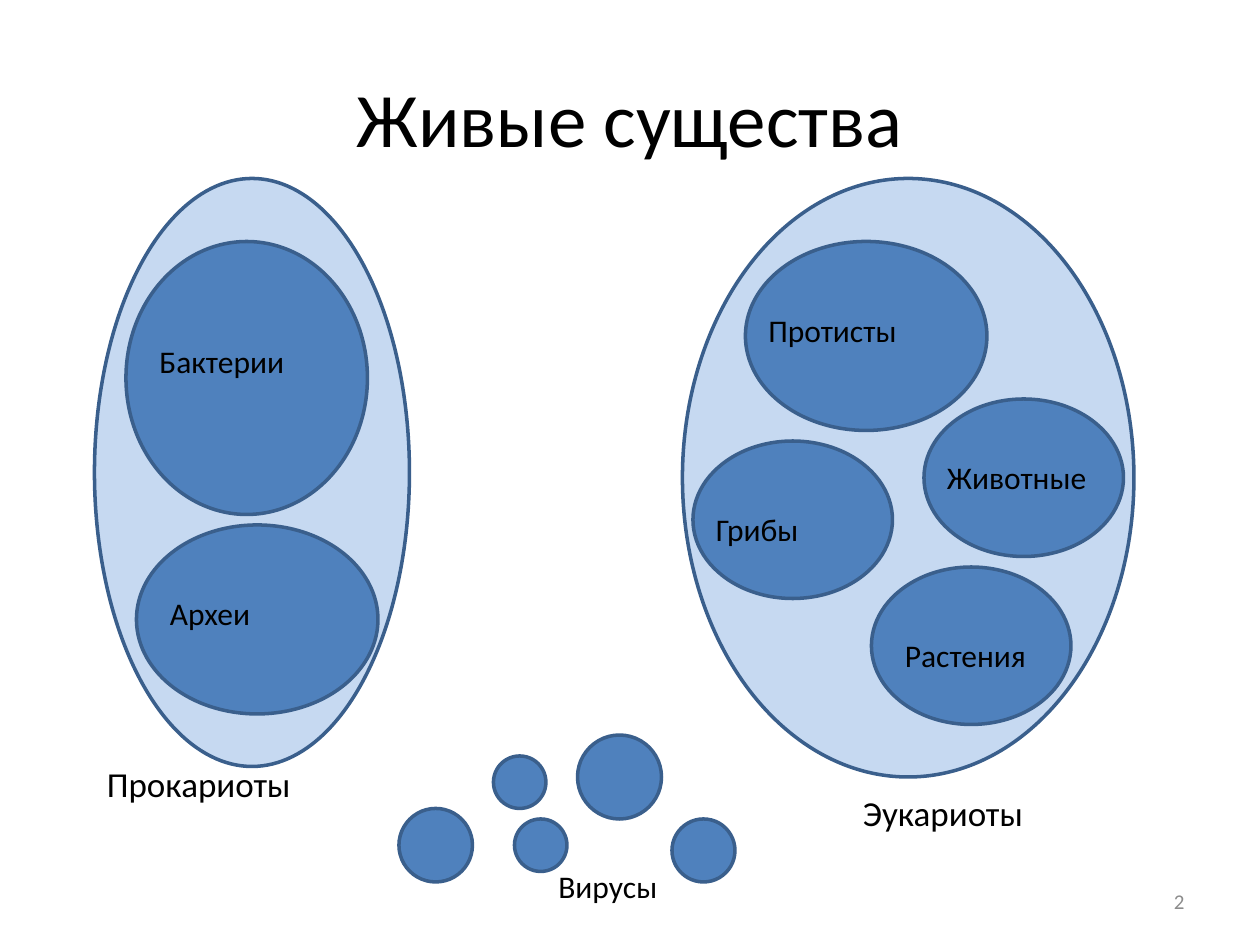
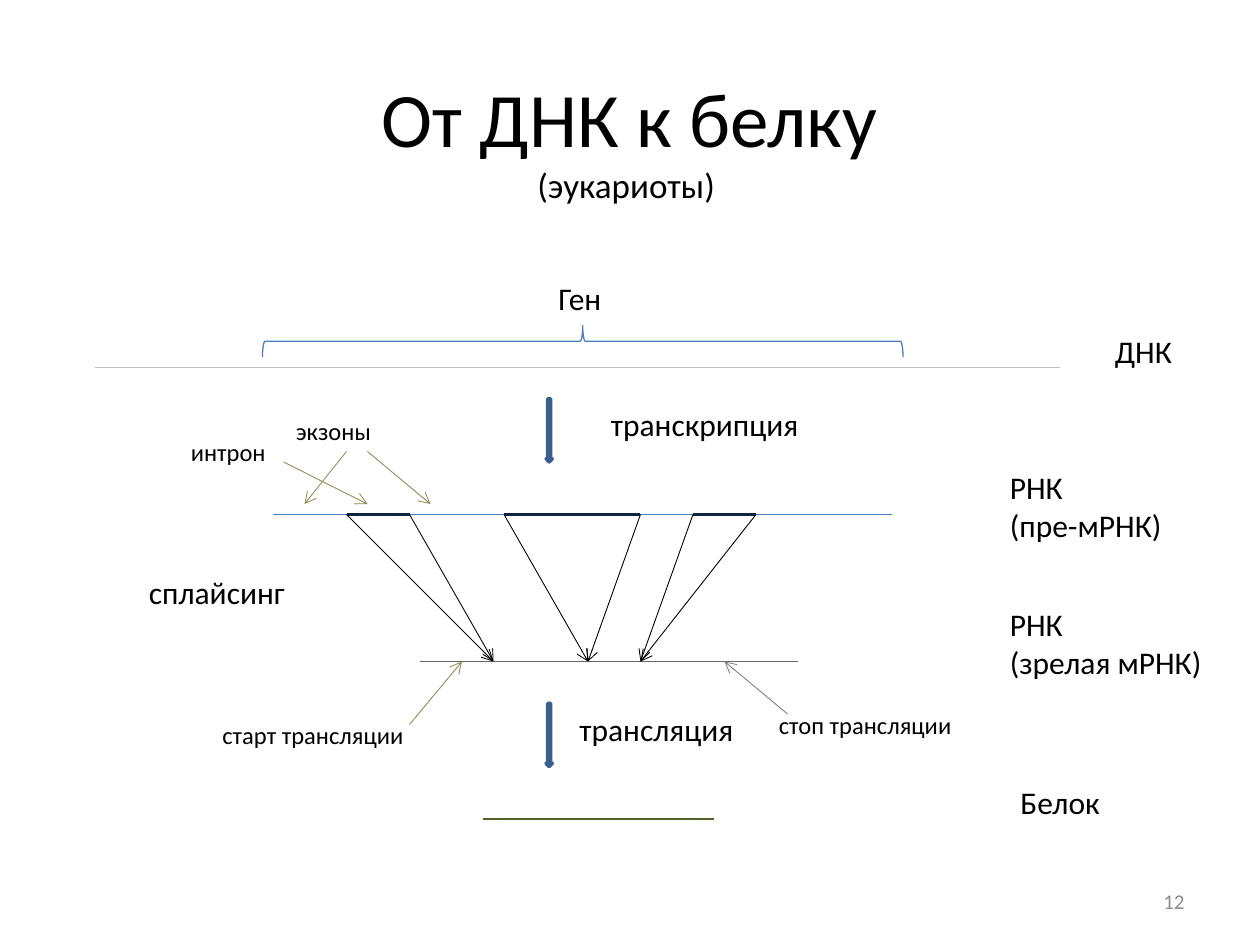
import dataclasses

import lxml.etree
import pptx
import pptx.dml.color
import pptx.enum.shapes
import pptx.enum.text
import pptx.oxml.ns
import pptx.util

SHAPE = pptx.enum.shapes.MSO_SHAPE
ALIGN = pptx.enum.text.PP_ALIGN
ANCHOR = pptx.enum.text.MSO_ANCHOR
COLUMNS, ROWS = 120, 90
CELL = pptx.util.Inches(10) // COLUMNS


@dataclasses.dataclass(frozen=True)
class Theme:
    font: str = "Calibri"
    title_size: int = 44
    caption_size: int = 20
    label_size: int = 18
    note_size: int = 14
    number_size: int = 12
    text: str = "000000"
    number: str = "8C8C8C"
    group_fill: str = "C6D9F1"
    member_fill: str = "4F81BD"
    outline: str = "3A5F8C"
    dna: str = "BFBFBF"
    rna: str = "4B7EBC"
    mature_rna: str = "666666"
    exon: str = "0F243E"
    protein: str = "4F6228"
    pointer: str = "948A54"
    stop_pointer: str = "808080"


THEME = Theme()


@dataclasses.dataclass(frozen=True)
class Region:
    slide: object
    left: float
    top: float

    def point(self, column, row):
        return round((self.left + column) * CELL), round((self.top + row) * CELL)

    def box(self, column, row, width, height):
        return *self.point(column, row), round(width * CELL), round(height * CELL)


def rgb(value):
    return pptx.dml.color.RGBColor.from_string(value)


def add_text(region, text, box, size=THEME.label_size, color=THEME.text,
             align=ALIGN.LEFT, anchor=ANCHOR.TOP):
    shape = region.slide.shapes.add_textbox(*region.box(*box))
    frame = shape.text_frame
    frame.word_wrap = True
    frame.vertical_anchor = anchor
    frame.text = text
    for paragraph in frame.paragraphs:
        paragraph.alignment = align
        for run in paragraph.runs:
            run.font.name = THEME.font
            run.font.size = pptx.util.Pt(size)
            run.font.color.rgb = rgb(color)


def add_filled(region, kind, box, fill=THEME.member_fill):
    shape = region.slide.shapes.add_shape(kind, *region.box(*box))
    shape.shadow.inherit = False
    shape.fill.solid()
    shape.fill.fore_color.rgb = rgb(fill)
    shape.line.color.rgb = rgb(THEME.outline)
    shape.line.width = pptx.util.Pt(2)


def add_line(region, start, end, color, width, arrow=False):
    connector = region.slide.shapes.add_connector(
        pptx.enum.shapes.MSO_CONNECTOR.STRAIGHT,
        *region.point(*start), *region.point(*end))
    connector.line.color.rgb = rgb(color)
    connector.line.width = pptx.util.Pt(width)
    if arrow:
        lxml.etree.SubElement(connector.line._get_or_add_ln(),
                              pptx.oxml.ns.qn("a:tailEnd"), type="arrow")
    lxml.etree.SubElement(connector._element.spPr, pptx.oxml.ns.qn("a:effectLst"))


def add_brace(region, column, row, width, height):
    middle_column, middle_row = column + width / 2, row + height / 2
    shape = region.slide.shapes.add_shape(SHAPE.RIGHT_BRACE, *region.box(
        middle_column - height / 2, middle_row - width / 2, height, width))
    shape.rotation = 270
    shape.shadow.inherit = False
    shape.fill.background()
    shape.line.color.rgb = rgb(THEME.rna)
    shape.line.width = pptx.util.Pt(0.75)


def add_page(presentation, title, number):
    slide = presentation.slides.add_slide(presentation.slide_layouts[6])
    page = Region(slide, 0, 0)
    add_text(page, title, (6, 3.6, 108, 15), THEME.title_size,
             align=ALIGN.CENTER, anchor=ANCHOR.MIDDLE)
    add_text(page, str(number), (86, 83.4, 28, 4.8), THEME.number_size,
             THEME.number, ALIGN.RIGHT, ANCHOR.MIDDLE)
    return slide


def draw_domain(region, size, caption, caption_at, members):
    add_filled(region, SHAPE.OVAL, (0, 0, *size), THEME.group_fill)
    for name, oval, label_at in members:
        add_filled(region, SHAPE.OVAL, oval)
        add_text(region, name, (*label_at, 19, 4.8))
    add_text(region, caption, (*caption_at, 23, 5.3), THEME.caption_size)


def draw_viruses(region):
    for column, row, diameter in ((9, 2, 5), (17, 0, 8), (26, 8, 6),
                                  (0, 7, 7), (11, 8, 5)):
        add_filled(region, SHAPE.OVAL, (column, row, diameter, diameter))
    add_text(region, "Вирусы", (14, 12, 12, 4.8))


def draw_dna(region):
    add_line(region, (0, 9), (92, 9), THEME.dna, 0.75)
    add_brace(region, 16, 5, 61, 3)
    add_text(region, "Ген", (43, 0, 15, 4.8))
    add_text(region, "ДНК", (96, 5, 15, 4.8))


def draw_step(region, name, label_column):
    add_filled(region, SHAPE.DOWN_ARROW, (0, 0, 0.6, 6))
    add_text(region, name, (label_column, 0, 26, 5))


def draw_splicing(region):
    rna_row, mature_row = 10, 24
    add_line(region, (13, rna_row), (72, rna_row), THEME.rna, 0.75)
    add_line(region, (27, mature_row), (63, mature_row), THEME.mature_rna, 0.75)
    for start, end, junction in ((20, 26, 34), (35, 48, 43), (53, 59, 48)):
        add_line(region, (start, rna_row), (end, rna_row), THEME.exon, 2)
        for edge in (start, end):
            add_line(region, (edge, rna_row), (junction, mature_row),
                     THEME.text, 0.5, arrow=True)
    for start, end, color in (
            ((14, 5), (22, 9), THEME.pointer),
            ((22, 4), (28, 9), THEME.pointer),
            ((20, 4), (16, 9), THEME.pointer),
            ((26, 30), (31, 24), THEME.pointer),
            ((62, 29), (56, 24), THEME.stop_pointer)):
        add_line(region, start, end, color, 0.5, arrow=True)
    for text, column, row, width in (
            ("экзоны", 14, 0, 16), ("интрон", 4, 2, 23),
            ("старт трансляции", 7, 29, 23), ("стоп трансляции", 60, 28, 23)):
        add_text(region, text, (column, row, width, 4), THEME.note_size)
    add_text(region, "сплайсинг", (0, 15, 26, 5))
    add_text(region, "РНК\v(пре-мРНК)", (82, 5, 22, 8.5))
    add_text(region, "РНК\v(зрелая мРНК)", (82, 18, 22, 8.5))


def draw_protein(region):
    add_line(region, (0, 4), (22, 4), THEME.protein, 1.25)
    add_text(region, "Белок", (50, 0, 20, 4.8))


def build_living_things(presentation):
    slide = add_page(presentation, "Живые существа", 2)
    draw_domain(Region(slide, 9, 17), (30, 56), "Прокариоты", (0, 55), (
        ("Бактерии", (3, 6, 23, 26), (5, 15)),
        ("Археи", (4, 33, 23, 18), (6, 39))))
    draw_domain(Region(slide, 65, 17), (43, 57), "Эукариоты", (16, 57.8), (
        ("Протисты", (6, 6, 23, 18), (7, 12)),
        ("Грибы", (1, 25, 19, 15), (2, 31)),
        ("Растения", (18, 37, 19, 15), (20, 43)),
        ("Животные", (23, 21, 19, 15), (24, 26))))
    draw_viruses(Region(slide, 38, 70))


def build_dna_to_protein(presentation):
    slide = add_page(presentation, "От ДНК к белку", 12)
    add_text(Region(slide, 50, 15), "(эукариоты)", (0, 0, 21, 5.3),
             THEME.caption_size)
    draw_dna(Region(slide, 9, 26))
    draw_step(Region(slide, 52, 38), "транскрипция", 5)
    draw_splicing(Region(slide, 13, 39))
    draw_step(Region(slide, 52, 67), "трансляция", 2)
    draw_protein(Region(slide, 46, 74))


def main():
    presentation = pptx.Presentation()
    presentation.slide_width = COLUMNS * CELL
    presentation.slide_height = ROWS * CELL
    build_living_things(presentation)
    build_dna_to_protein(presentation)
    presentation.save("out.pptx")


if __name__ == "__main__":
    main()
